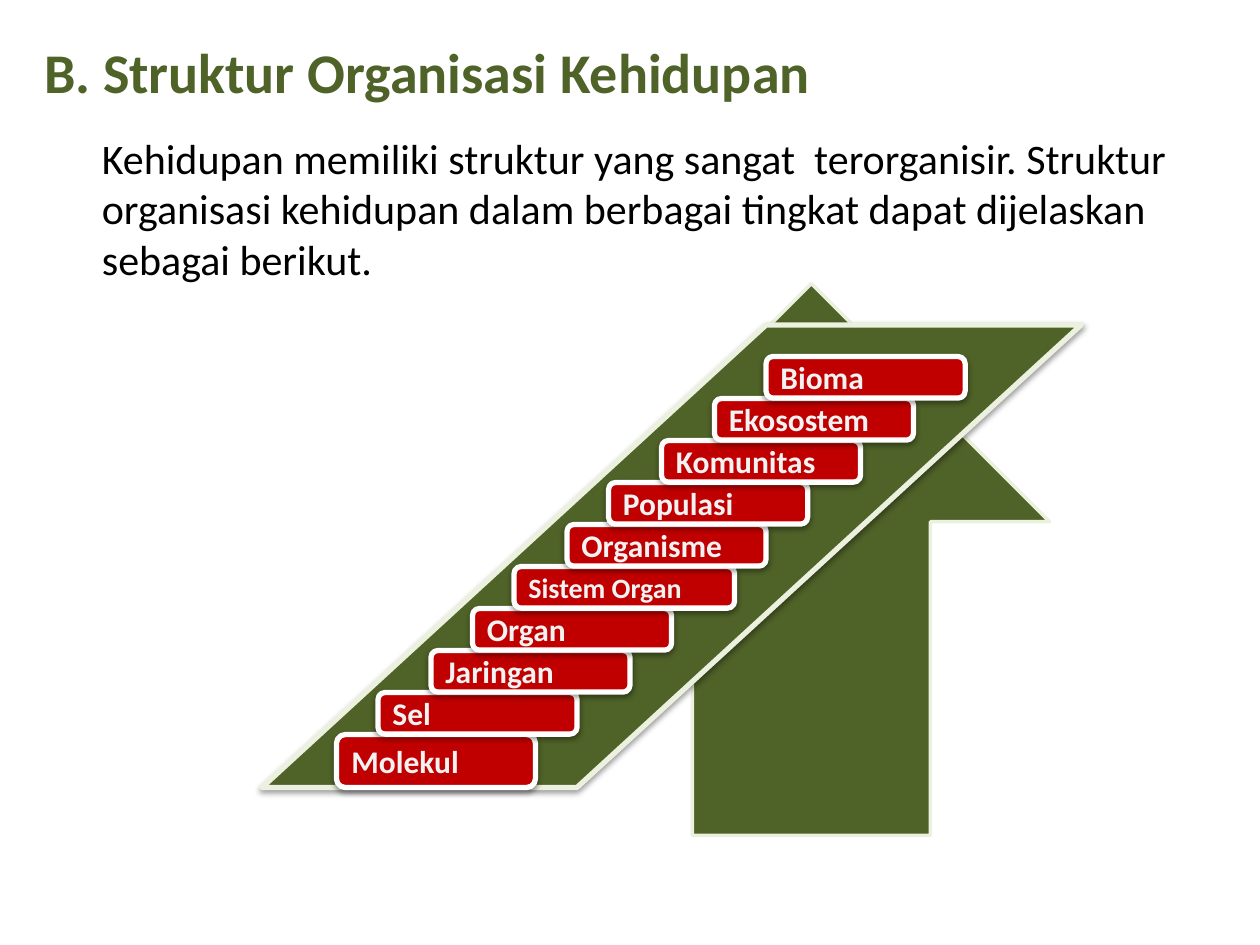
from pptx import Presentation
from pptx.dml.color import RGBColor
from pptx.enum.shapes import MSO_SHAPE
from pptx.enum.text import MSO_ANCHOR, PP_ALIGN
from pptx.oxml import parse_xml
from pptx.oxml.ns import nsdecls, qn
from pptx.util import Inches, Pt

GREEN = RGBColor(0x4F, 0x62, 0x28)
PALE_GREEN = RGBColor(0xEB, 0xF1, 0xDE)
RED = RGBColor(0xC0, 0x00, 0x00)
WHITE = RGBColor(0xFF, 0xFF, 0xFF)
OFF_WHITE = RGBColor(0xF2, 0xF2, 0xF2)
BLACK = RGBColor(0x00, 0x00, 0x00)

TITLE = {"size": Pt(32), "bold": True}
BODY = {"size": Pt(24), "bold": False}
LABEL = {"size": Pt(18), "bold": True}
SMALL_LABEL = {"size": Pt(16), "bold": True}

LEVELS = [
    ("Molekul", 2.67), ("Sel", 3), ("Jaringan", 3.42), ("Organ", 3.75),
    ("Sistem Organ", 4.08), ("Organisme", 4.5), ("Populasi", 4.83),
    ("Komunitas", 5.25), ("Ekosostem", 5.67), ("Bioma", 6.08),
]
BASE_TOP = 5.83
STEP = 1 / 3

SHADOW = (
    f'<a:outerShdw {nsdecls("a")} blurRad="40000" dist="20000" dir="5400000" '
    'rotWithShape="0"><a:srgbClr val="000000"><a:alpha val="38000"/>'
    '</a:srgbClr></a:outerShdw>'
)


class SlideBuilder:
    font_name = "Calibri"

    def __init__(self, slide):
        self.s = slide

    def set_text(self, sp, text, fmt, color, anchor):
        tf = sp.text_frame
        tf.word_wrap = True
        tf.vertical_anchor = anchor
        p = tf.paragraphs[0]
        p.alignment = PP_ALIGN.LEFT
        r = p.add_run()
        r.text = text
        r.font.name = self.font_name
        r.font.color.rgb = color
        for name, value in fmt.items():
            setattr(r.font, name, value)
        return p

    def title(self, box, text):
        sp = self.s.shapes.title
        sp.left, sp.top, sp.width, sp.height = map(Inches, box)
        self.set_text(sp, text, TITLE, GREEN, MSO_ANCHOR.MIDDLE)

    def paragraph(self, box, text, indent):
        sp = self.s.shapes.add_textbox(*map(Inches, box))
        p = self.set_text(sp, text, BODY, BLACK, MSO_ANCHOR.TOP)
        p._p.get_or_add_pPr().set("marL", str(Inches(indent)))

    def shape(self, kind, box, fill, line, weight, shadow=True, parent=None):
        shapes = (parent or self.s).shapes
        sp = shapes.add_shape(kind, *map(Inches, box))
        sp.fill.solid()
        sp.fill.fore_color.rgb = fill
        sp.line.color.rgb = line
        sp.line.width = Pt(weight)
        sp.shadow.inherit = False
        if shadow:
            effects = sp._element.spPr.find(qn("a:effectLst"))
            effects.append(parse_xml(SHADOW))
        return sp

    def level(self, group, box, text, fmt):
        sp = self.shape(MSO_SHAPE.FLOWCHART_ALTERNATE_PROCESS, box,
                        RED, WHITE, 3, parent=group)
        self.set_text(sp, text, fmt, OFF_WHITE, MSO_ANCHOR.MIDDLE)


def main():
    prs = Presentation()
    prs.slide_width, prs.slide_height = Inches(10), Inches(7.5)
    b = SlideBuilder(prs.slides.add_slide(prs.slide_layouts[5]))

    b.paragraph(
        (0.58, 1, 9.08, 1.31),
        "Kehidupan memiliki struktur yang sangat  terorganisir. Struktur "
        "organisasi kehidupan dalam berbagai tingkat dapat dijelaskan "
        "sebagai berikut.", 0.13)
    b.title((0.25, 0.08, 7, 0.97), "B. Struktur Organisasi Kehidupan")

    arrow = b.shape(MSO_SHAPE.RIGHT_ARROW, (4.25, 2.55, 4.38, 3.78),
                    GREEN, PALE_GREEN, 2, shadow=False)
    arrow.rotation = 270
    ramp = b.shape(MSO_SHAPE.PARALLELOGRAM, (2.08, 2.58, 6.5, 3.67),
                   GREEN, PALE_GREEN, 3)
    ramp.adjustments[0] = 1.09

    stairs = b.s.shapes.add_group_shape()
    for i, (name, left) in enumerate(LEVELS):
        is_long = name == "Sistem Organ"
        width = 1.75 if is_long else 1.58
        height = 0.42 if i == 0 else 0.33
        b.level(stairs, (left, BASE_TOP - i * STEP, width, height), name,
                SMALL_LABEL if is_long else LABEL)

    prs.save("out.pptx")


if __name__ == "__main__":
    main()
